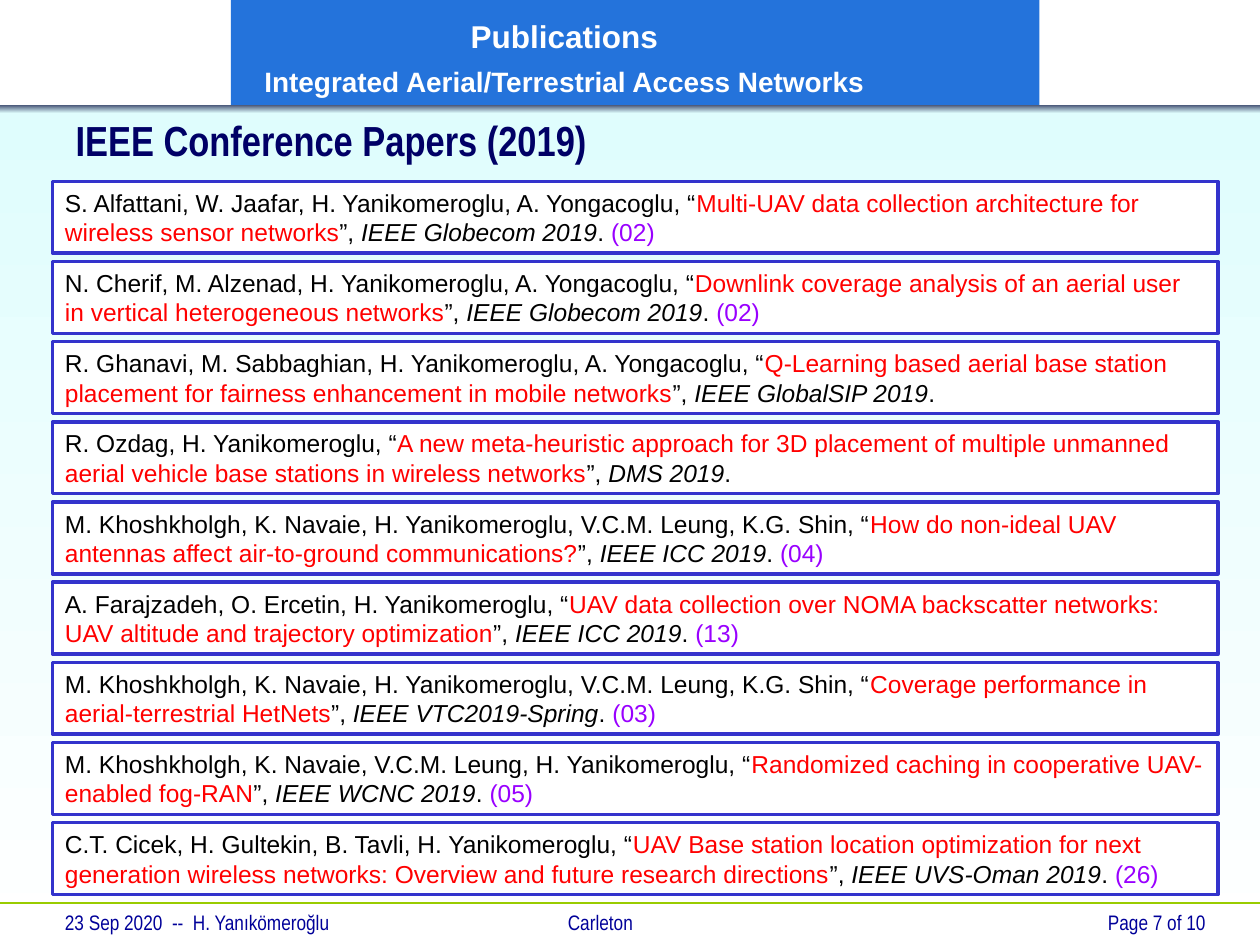
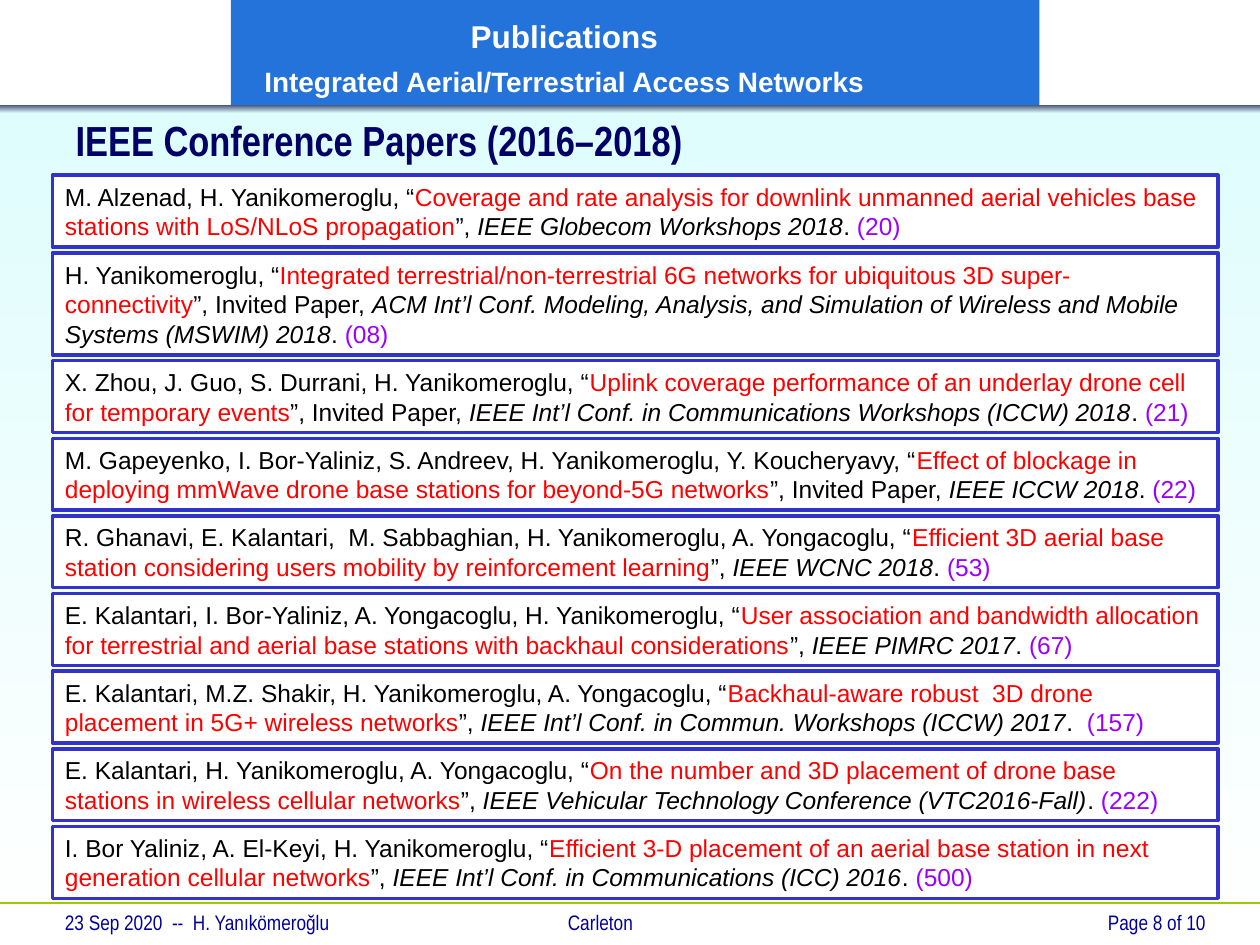
import dataclasses

import lxml.etree
import pptx
import pptx.dml.color
import pptx.enum.shapes
import pptx.enum.text
import pptx.oxml.ns
import pptx.util

ALIGN = pptx.enum.text.PP_ALIGN
MIDDLE = pptx.enum.text.MSO_ANCHOR.MIDDLE
CELL = pptx.util.Inches(1) // 12  # the slide is a grid of 120 columns by 90 rows
COLUMNS, ROWS = 120, 90
MARGIN, CONTENT_WIDTH = 5, 111
HEADER_HEIGHT, FOOTER_TOP = 10, 86
LINE_HEIGHT, ENTRY_PADDING = 2.88, 1.08


@dataclasses.dataclass(frozen=True)
class Theme:
    body_font: str = "Arial"
    narrow_font: str = "Arial Narrow"
    banner_size: int = 18
    subject_size: int = 16
    title_size: int = 24
    entry_size: int = 14
    footer_size: int = 12
    white: str = "FFFFFF"
    sky: str = "DFFDFD"
    shade: str = "475577"
    banner: str = "2473DB"
    rule: str = "99CC00"
    title: str = "000066"
    footer: str = "000099"
    border: str = "3333CC"
    text: str = "000000"
    paper: str = "FF0000"
    citations: str = "9900FF"


THEME = Theme()


@dataclasses.dataclass(frozen=True)
class Entry:
    authors: str
    paper: str
    venue: str
    citations: str = ""
    note: str = ""
    lines: int = 2

    @property
    def height(self):
        return ENTRY_PADDING + LINE_HEIGHT * self.lines


@dataclasses.dataclass(frozen=True)
class Page:
    number: int
    title: str
    top: float
    bottom: float
    entries: tuple


PAGES = (
    Page(7, "IEEE Conference Papers (2019)", 17.28, 85.2, (
        Entry("S. Alfattani, W. Jaafar, H. Yanikomeroglu, A. Yongacoglu",
              "Multi-UAV data collection architecture for wireless sensor networks",
              "IEEE Globecom 2019", "(02)"),
        Entry("N. Cherif, M. Alzenad, H. Yanikomeroglu, A. Yongacoglu",
              "Downlink coverage analysis of an aerial user in vertical heterogeneous networks",
              "IEEE Globecom 2019", "(02)"),
        Entry("R. Ghanavi, M. Sabbaghian, H. Yanikomeroglu, A. Yongacoglu",
              "Q-Learning based aerial base station placement for fairness enhancement "
              "in mobile networks",
              "IEEE GlobalSIP 2019"),
        Entry("R. Ozdag, H. Yanikomeroglu",
              "A new meta-heuristic approach for 3D placement of multiple unmanned aerial "
              "vehicle base stations in wireless networks",
              "DMS 2019"),
        Entry("M. Khoshkholgh, K. Navaie, H. Yanikomeroglu, V.C.M. Leung, K.G. Shin",
              "How do non-ideal UAV antennas affect air-to-ground communications?",
              "IEEE ICC 2019", "(04)"),
        Entry("A. Farajzadeh, O. Ercetin, H. Yanikomeroglu",
              "UAV data collection over NOMA backscatter networks: UAV altitude and "
              "trajectory optimization",
              "IEEE ICC 2019", "(13)"),
        Entry("M. Khoshkholgh, K. Navaie, H. Yanikomeroglu, V.C.M. Leung, K.G. Shin",
              "Coverage performance in aerial-terrestrial HetNets",
              "IEEE VTC2019-Spring", "(03)"),
        Entry("M. Khoshkholgh, K. Navaie, V.C.M. Leung, H. Yanikomeroglu",
              "Randomized caching in cooperative UAV-enabled fog-RAN",
              "IEEE WCNC 2019", "(05)"),
        Entry("C.T. Cicek, H. Gultekin, B. Tavli, H. Yanikomeroglu",
              "UAV Base station location optimization for next generation wireless networks: "
              "Overview and future research directions",
              "IEEE UVS-Oman 2019", "(26)"),
    )),
    Page(8, "IEEE Conference Papers (2016–2018)", 16.68, 85.56, (
        Entry("M. Alzenad, H. Yanikomeroglu",
              "Coverage and rate analysis for downlink unmanned aerial vehicles base stations "
              "with LoS/NLoS propagation",
              "IEEE Globecom Workshops 2018", "(20)"),
        Entry("H. Yanikomeroglu",
              "Integrated terrestrial/non-terrestrial 6G networks for ubiquitous 3D "
              "super-connectivity",
              "ACM Int’l Conf. Modeling, Analysis, and Simulation of Wireless and Mobile "
              "Systems (MSWIM) 2018", "(08)", "Invited Paper, ", lines=3),
        Entry("X. Zhou, J. Guo, S. Durrani, H. Yanikomeroglu",
              "Uplink coverage performance of an underlay drone cell for temporary events",
              "IEEE Int’l Conf. in Communications Workshops (ICCW) 2018", "(21)",
              "Invited Paper, "),
        Entry("M. Gapeyenko, I. Bor-Yaliniz, S. Andreev, H. Yanikomeroglu, Y. Koucheryavy",
              "Effect of blockage in deploying mmWave drone base stations for beyond-5G networks",
              "IEEE ICCW 2018", "(22)", "Invited Paper, "),
        Entry("R. Ghanavi, E. Kalantari,  M. Sabbaghian, H. Yanikomeroglu, A. Yongacoglu",
              "Efficient 3D aerial base station considering users mobility by reinforcement "
              "learning",
              "IEEE WCNC 2018", "(53)"),
        Entry("E. Kalantari, I. Bor-Yaliniz, A. Yongacoglu, H. Yanikomeroglu",
              "User association and bandwidth allocation for terrestrial and aerial base "
              "stations with backhaul considerations",
              "IEEE PIMRC 2017", "(67)"),
        Entry("E. Kalantari, M.Z. Shakir, H. Yanikomeroglu, A. Yongacoglu",
              "Backhaul-aware robust  3D drone placement in 5G+ wireless networks",
              "IEEE Int’l Conf. in Commun. Workshops (ICCW) 2017", " (157)"),
        Entry("E. Kalantari, H. Yanikomeroglu, A. Yongacoglu",
              "On the number and 3D placement of drone base stations in wireless cellular "
              "networks",
              "IEEE Vehicular Technology Conference (VTC2016-Fall)", "(222)"),
        Entry("I. Bor Yaliniz, A. El-Keyi, H. Yanikomeroglu",
              "Efficient 3-D placement of an aerial base station in next generation cellular "
              "networks",
              "IEEE Int’l Conf. in Communications (ICC) 2016", "(500)"),
    )),
)


def rgb(code):
    return pptx.dml.color.RGBColor.from_string(code)


def cells(*counts):
    return [round(count * CELL) for count in counts]


def add_run(paragraph, text, size, color, font=THEME.body_font, bold=False, italic=False):
    run = paragraph.add_run()
    run.text = text
    run.font.name, run.font.size = font, pptx.util.Pt(size)
    run.font.bold, run.font.italic = bold, italic
    run.font.color.rgb = rgb(color)


def add_block(slide, left, top, width, height, *colors):
    """Rectangle in one colour, or fading from the first colour down to the second."""
    block = slide.shapes.add_shape(pptx.enum.shapes.MSO_SHAPE.RECTANGLE,
                                   *cells(left, top, width, height))
    block.shadow.inherit = False
    block.line.fill.background()
    if len(colors) == 1:
        block.fill.solid()
        block.fill.fore_color.rgb = rgb(colors[0])
    else:
        block.fill.gradient()
        block.fill.gradient_angle = 270
        for stop, color in zip(block.fill.gradient_stops, colors):
            stop.color.rgb = rgb(color)
    return block


def add_footer_text(slide, left, width, text, align=ALIGN.LEFT):
    footer = slide.shapes.add_textbox(*cells(left, FOOTER_TOP, width, 3))
    footer.text_frame.word_wrap = True
    paragraph = footer.text_frame.paragraphs[0]
    paragraph.alignment = align
    add_run(paragraph, text, THEME.footer_size, THEME.footer, THEME.narrow_font)
    return footer


def add_footer_rule(slide):
    rule = slide.shapes.add_connector(pptx.enum.shapes.MSO_CONNECTOR.STRAIGHT,
                                      *cells(0, FOOTER_TOP, COLUMNS, FOOTER_TOP))
    rule.line.color.rgb = rgb(THEME.rule)
    rule.line.width = pptx.util.Pt(0.75)
    lxml.etree.SubElement(rule.element.spPr, pptx.oxml.ns.qn("a:effectLst"))
    return rule


def add_banner(slide):
    banner = add_block(slide, 22, 0, 77, HEADER_HEIGHT, THEME.banner)
    frame = banner.text_frame
    frame.vertical_anchor = MIDDLE
    frame.margin_left, frame.margin_right, frame.margin_top, frame.margin_bottom = cells(
        0, 13.5, 0.6, 0)
    heading, subject = frame.paragraphs[0], frame.add_paragraph()
    subject.space_before = pptx.util.Pt(3.2)
    add_run(heading, "Publications", THEME.banner_size, THEME.white, bold=True)
    add_run(subject, "Integrated Aerial/Terrestrial Access Networks",
            THEME.subject_size, THEME.white, bold=True)
    for paragraph in frame.paragraphs:
        paragraph.alignment = ALIGN.CENTER
        paragraph.line_spacing = 1.1
    return banner


def share_frame(slide, layout):
    """Build the background, banner and footer, and move them to the layout."""
    for placeholder in list(layout.placeholders):
        if placeholder.placeholder_format.type != pptx.enum.shapes.PP_PLACEHOLDER.TITLE:
            placeholder.element.getparent().remove(placeholder.element)
    parts = (
        add_block(slide, 0, 10.3, COLUMNS, ROWS - 10.3, THEME.sky, THEME.white),
        add_footer_rule(slide),
        add_footer_text(slide, MARGIN, 45, "23 Sep 2020  --  H. Yanıkömeroğlu"),
        add_footer_text(slide, 52.9, 20, "Carleton"),
        add_block(slide, 0, HEADER_HEIGHT, COLUMNS, 0.8, THEME.shade, THEME.sky),
        add_banner(slide),
    )
    for part in parts:
        layout.shapes.element.append(part.element)


def set_title(slide, text):
    title = slide.shapes.title
    title.left, title.top, title.width, title.height = cells(6, 10.8, 103, 5)
    title.text_frame.vertical_anchor = MIDDLE
    paragraph = title.text_frame.paragraphs[0]
    paragraph.alignment = ALIGN.LEFT
    add_run(paragraph, text, THEME.title_size, THEME.title, THEME.narrow_font, bold=True)


def add_entry(slide, top, entry):
    box = add_block(slide, MARGIN, top, CONTENT_WIDTH, entry.height, THEME.white)
    box.line.color.rgb = rgb(THEME.border)
    box.line.width = pptx.util.Pt(2)
    box.text_frame.word_wrap = True
    box.text_frame.vertical_anchor = MIDDLE
    citation = box.text_frame.paragraphs[0]
    citation.alignment = ALIGN.LEFT
    size = THEME.entry_size
    add_run(citation, f"{entry.authors}, “", size, THEME.text)
    add_run(citation, entry.paper, size, THEME.paper)
    add_run(citation, f"”, {entry.note}", size, THEME.text)
    add_run(citation, entry.venue, size, THEME.text, italic=True)
    add_run(citation, ". " if entry.citations else ".", size, THEME.text)
    if entry.citations:
        add_run(citation, entry.citations, size, THEME.citations)


def add_entries(slide, page):
    """Stack the entries with equal gaps between the page's top and bottom."""
    free = page.bottom - page.top - sum(entry.height for entry in page.entries)
    gap = free / (len(page.entries) - 1)
    top = page.top
    for entry in page.entries:
        add_entry(slide, top, entry)
        top += entry.height + gap


def main():
    deck = pptx.Presentation()
    deck.slide_width, deck.slide_height = cells(COLUMNS, ROWS)
    layout = deck.slide_layouts.get_by_name("Title Only")
    slides = [deck.slides.add_slide(layout) for _ in PAGES]
    share_frame(slides[0], layout)
    for slide, page in zip(slides, PAGES):
        set_title(slide, page.title)
        add_entries(slide, page)
        add_footer_text(slide, 90, 26, f"Page {page.number} of 10", ALIGN.RIGHT)
    deck.save("out.pptx")


if __name__ == "__main__":
    main()
